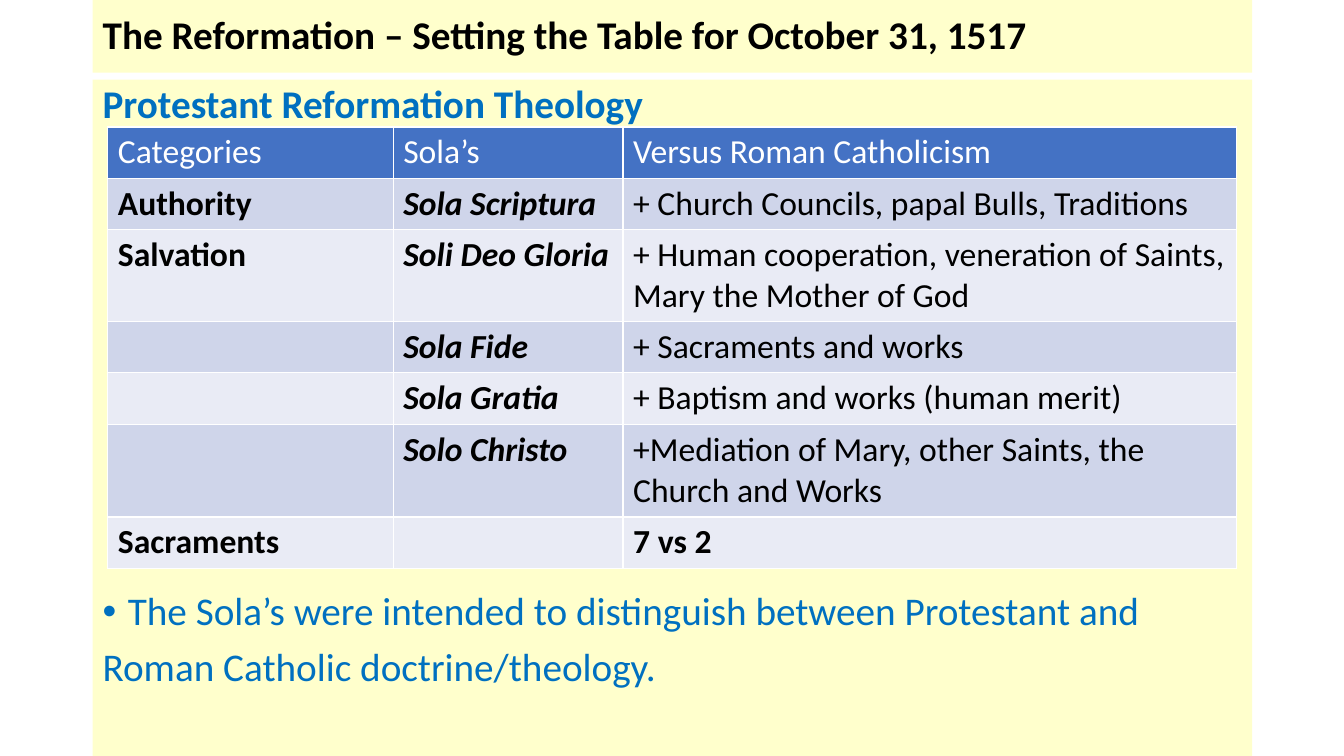
"""Builds a slide on Protestant Reformation theology with a table of the Solas."""
from lxml import etree
from pptx import Presentation
from pptx.dml.color import RGBColor
from pptx.enum.text import MSO_ANCHOR
from pptx.oxml.ns import qn
from pptx.util import Inches, Pt

MIDDLE = MSO_ANCHOR.MIDDLE
FONT = "Calibri"
CREAM = RGBColor(0xFF, 0xFF, 0xCC)
BLACK = RGBColor(0x00, 0x00, 0x00)
WHITE = RGBColor(0xFF, 0xFF, 0xFF)
BLUE = RGBColor(0x00, 0x70, 0xC0)
HEADER_BLUE = RGBColor(0x44, 0x72, 0xC4)
BAND_DARK = RGBColor(0xCF, 0xD5, 0xEA)
BAND_LIGHT = RGBColor(0xE9, 0xEB, 0xF5)

ROWS = [
    ("Categories", "Sola’s", "Versus Roman Catholicism"),
    ("Authority", "Sola Scriptura", "+ Church Councils, papal Bulls, Traditions"),
    ("Salvation", "Soli Deo Gloria",
     "+ Human cooperation, veneration of Saints, Mary the Mother of God"),
    ("", "Sola Fide", "+ Sacraments and works"),
    ("", "Sola Gratia", "+ Baptism and works (human merit)"),
    ("", "Solo Christo", "+Mediation of Mary, other Saints, the Church and Works"),
    ("Sacraments", "", "7 vs 2"),
]
COLUMN_WIDTHS = [2.83, 2.28, 6.08]
ROW_HEIGHTS = [0.51, 0.51, 0.91, 0.51, 0.51, 0.92, 0.51]


def add_panel(page, top, height):
    panel = page.shapes.add_textbox(Inches(0.92), Inches(top), Inches(11.5), Inches(height))
    panel.fill.solid()
    panel.fill.fore_color.rgb = CREAM
    panel.text_frame.word_wrap = True
    return panel.text_frame


def write(para, text, size, color, bold=False, italic=False):
    para.text = text
    for span in para.runs:
        span.font.name = FONT
        span.font.size = Pt(size)
        span.font.color.rgb = color
        span.font.bold = bold
        span.font.italic = italic


deck = Presentation()
deck.slide_width = Inches(13.33)
deck.slide_height = Inches(7.5)
page = deck.slides.add_slide(deck.slide_layouts[6])

title = add_panel(page, 0, 0.72)
title.vertical_anchor = MIDDLE
title.paragraphs[0].line_spacing = 0.9
write(title.paragraphs[0], "The Reformation – Setting the Table for October 31, 1517",
      28, BLACK, bold=True)

body = add_panel(page, 0.79, 6.71)
heading = body.paragraphs[0]
bullet = body.add_paragraph()
closing = body.add_paragraph()
write(heading, "Protestant Reformation Theology", 28, BLUE, bold=True)
write(bullet, "The Sola’s were intended to distinguish between Protestant and", 28, BLUE)
write(closing, "Roman Catholic doctrine/theology.", 28, BLUE)
for para, space_before in ((heading, 0), (bullet, 332), (closing, 10)):
    para.line_spacing = 0.9
    para.space_before = Pt(space_before)

bullet_format = bullet._p.get_or_add_pPr()
bullet_format.set("marL", str(Inches(0.25)))
bullet_format.set("indent", str(Inches(-0.25)))
etree.SubElement(bullet_format, qn("a:buFont")).set("typeface", "Arial")
etree.SubElement(bullet_format, qn("a:buChar")).set("char", "•")

table = page.shapes.add_table(len(ROWS), len(COLUMN_WIDTHS), Inches(1.07), Inches(1.26),
                              Inches(sum(COLUMN_WIDTHS)), Inches(sum(ROW_HEIGHTS))).table
for column, width in zip(table.columns, COLUMN_WIDTHS):
    column.width = Inches(width)
for row, height in zip(table.rows, ROW_HEIGHTS):
    row.height = Inches(height)

for row_index, texts in enumerate(ROWS):
    is_header = row_index == 0
    is_last = row_index == len(ROWS) - 1
    band = BAND_DARK if row_index % 2 else BAND_LIGHT
    for column_index, text in enumerate(texts):
        cell = table.cell(row_index, column_index)
        cell.fill.solid()
        cell.fill.fore_color.rgb = HEADER_BLUE if is_header else band
        write(cell.text_frame.paragraphs[0], text, 24, WHITE if is_header else BLACK,
              bold=not is_header and (column_index < 2 or is_last),
              italic=not is_header and column_index == 1)

deck.save("out.pptx")
